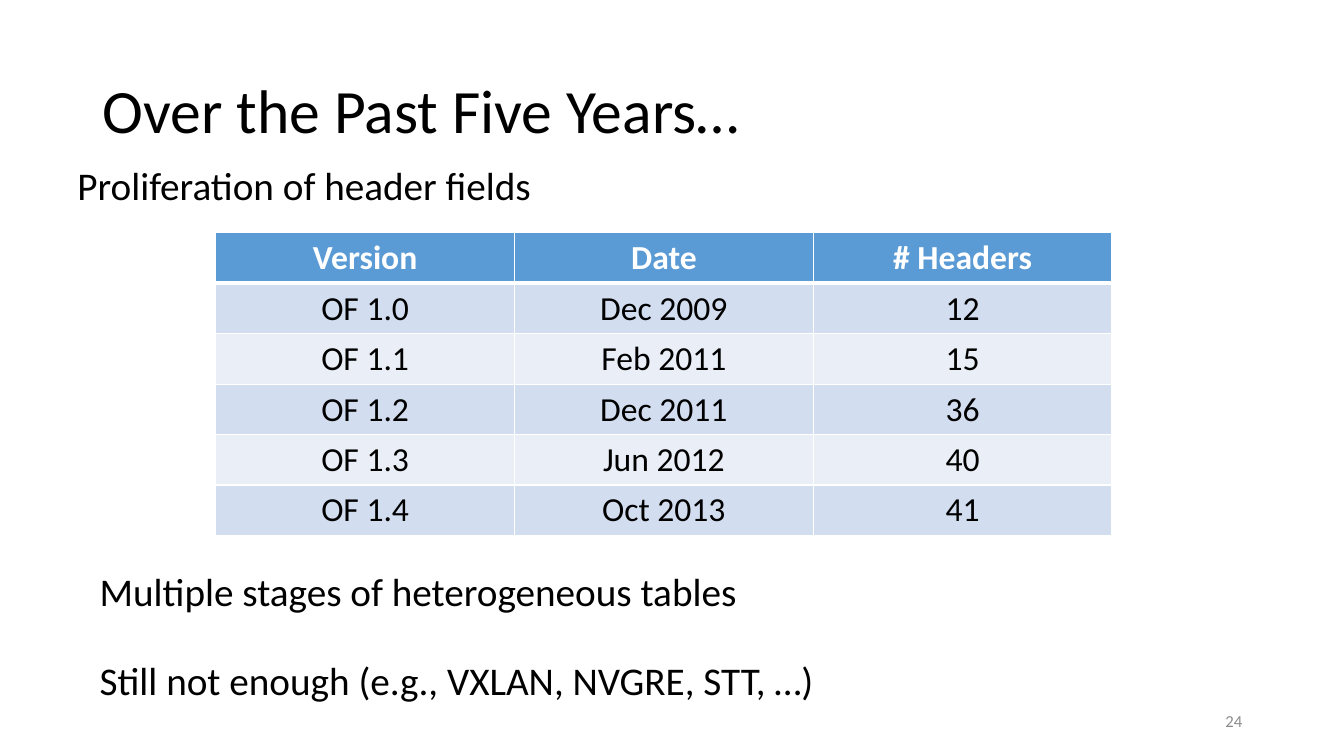
from lxml import etree
from pptx import Presentation
from pptx.dml.color import RGBColor
from pptx.enum.text import MSO_ANCHOR, PP_ALIGN
from pptx.oxml.ns import qn
from pptx.util import Pt

PX = 9144
FONT = "Calibri"
BLACK = RGBColor(0x00, 0x00, 0x00)
WHITE = RGBColor(0xFF, 0xFF, 0xFF)
GRAY = RGBColor(0x8C, 0x8C, 0x8C)
HEADER_BLUE = RGBColor(0x5B, 0x9B, 0xD5)
BANDS = (RGBColor(0xD2, 0xDE, 0xEF), RGBColor(0xEA, 0xEF, 0xF7))
LEFT, CENTER, RIGHT = PP_ALIGN.LEFT, PP_ALIGN.CENTER, PP_ALIGN.RIGHT
TOP, MIDDLE = MSO_ANCHOR.TOP, MSO_ANCHOR.MIDDLE

VERSIONS = (
    ("Version", "Date", "# Headers"),
    ("OF 1.0", "Dec 2009", "12"),
    ("OF 1.1", "Feb 2011", "15"),
    ("OF 1.2", "Dec 2011", "36"),
    ("OF 1.3", "Jun 2012", "40"),
    ("OF 1.4", "Oct 2013", "41"),
)


def write_text(frame, text, size, color=BLACK, bold=False, align=LEFT, spacing=None):
    paragraph = frame.paragraphs[0]
    paragraph.alignment = align
    if spacing:
        paragraph.line_spacing = spacing
    run = paragraph.add_run()
    run.text = text
    run.font.name = FONT
    run.font.size = Pt(size)
    run.font.bold = bold
    run.font.color.rgb = color


def add_text(slide, box, text, size, anchor=TOP, wrap=True, **style):
    frame = slide.shapes.add_textbox(*(length * PX for length in box)).text_frame
    frame.word_wrap = wrap
    frame.vertical_anchor = anchor
    write_text(frame, text, size, **style)


def add_border(cell, side, width):
    line = etree.SubElement(cell._tc.get_or_add_tcPr(), qn(f"a:ln{side}"), w=str(Pt(width)))
    fill = etree.SubElement(line, qn("a:solidFill"))
    etree.SubElement(fill, qn("a:srgbClr"), val=str(WHITE))


def format_cell(cell, text, row):
    is_header = row == 0
    cell.margin_left = cell.margin_right = 13 * PX
    cell.margin_top = cell.margin_bottom = 5 * PX
    widths = {"L": 1, "R": 1, "T": 3 if row == 1 else 1, "B": 3 if is_header else 1}
    for side, width in widths.items():
        add_border(cell, side, width)
    cell.fill.solid()
    cell.fill.fore_color.rgb = HEADER_BLUE if is_header else BANDS[(row - 1) % 2]
    write_text(cell.text_frame, text, 24, color=WHITE if is_header else BLACK,
               bold=is_header, align=CENTER)


def add_version_table(slide, box):
    left, top, width, height = (length * PX for length in box)
    row_count, column_count = len(VERSIONS), len(VERSIONS[0])
    table = slide.shapes.add_table(row_count, column_count, left, top, width, height).table
    for row, values in enumerate(VERSIONS):
        for column, text in enumerate(values):
            format_cell(table.cell(row, column), text, row)


def add_heading(slide, box):
    add_text(slide, box, "Over the Past Five Years…", 44, anchor=MIDDLE, spacing=0.9)


def add_statement(slide, box, text):
    add_text(slide, box, text, 28, wrap=False)


def add_slide_number(slide, box):
    add_text(slide, box, "24", 12, anchor=MIDDLE, color=GRAY, align=RIGHT)


def main():
    presentation = Presentation()
    presentation.slide_width = 1333 * PX
    presentation.slide_height = 750 * PX
    slide = presentation.slides.add_slide(presentation.slide_layouts[6])
    add_heading(slide, (92, 40, 1150, 145))
    add_slide_number(slide, (942, 695, 300, 40))
    add_version_table(slide, (214, 231, 889, 300))
    add_statement(slide, (67, 155, 475, 57), "Proliferation of header fields")
    add_statement(slide, (89, 558, 659, 57), "Multiple stages of heterogeneous tables")
    add_statement(slide, (89, 646, 737, 57), "Still not enough (e.g., VXLAN, NVGRE, STT, …)")
    presentation.save("out.pptx")


if __name__ == "__main__":
    main()
